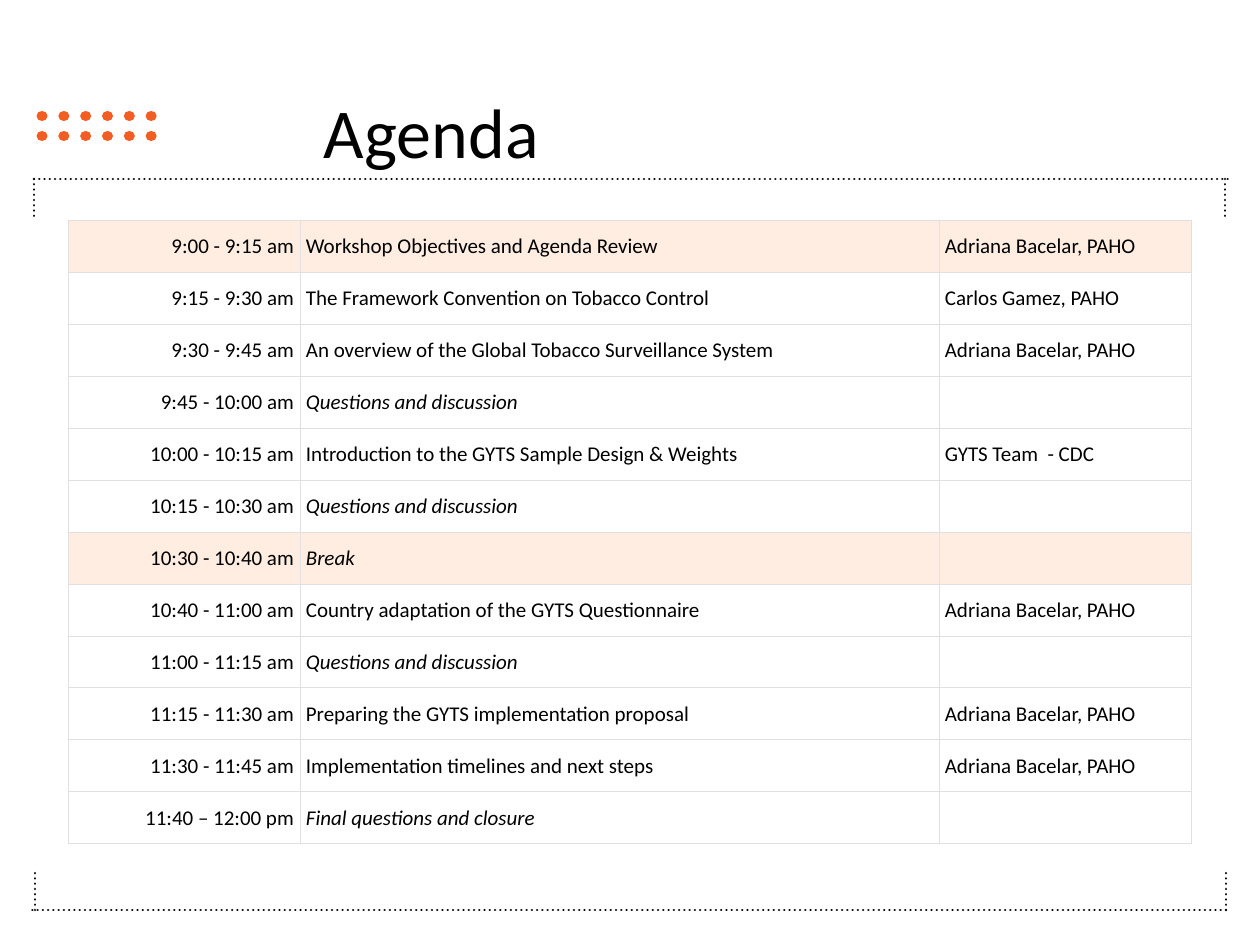
"""Build the workshop agenda slide."""
from dataclasses import dataclass

from lxml import etree
from pptx import Presentation
from pptx.dml.color import RGBColor
from pptx.enum.dml import MSO_LINE
from pptx.enum.shapes import MSO_CONNECTOR
from pptx.enum.text import MSO_ANCHOR, MSO_AUTO_SIZE, PP_ALIGN
from pptx.oxml.ns import qn
from pptx.util import Emu, Pt

STRAIGHT = MSO_CONNECTOR.STRAIGHT
ROUND_DOT = MSO_LINE.ROUND_DOT
MIDDLE, BOTTOM = MSO_ANCHOR.MIDDLE, MSO_ANCHOR.BOTTOM
LEFT, RIGHT = PP_ALIGN.LEFT, PP_ALIGN.RIGHT
NO_FIT = MSO_AUTO_SIZE.NONE

EMU_PER_PX = 914400 / 126
TITLE_ONLY = 5
FONT = "Calibri"
COLORS = {"text": "000000", "accent": "F15D22", "highlight": "FEEDE0", "border": "E0E0E0"}
COLUMN_WIDTHS = (232, 639, 252)
ROW_HEIGHT = 52
CELL_MARGIN = 6


@dataclass(frozen=True)
class DottedLine:
    x1: int
    y1: int
    x2: int
    y2: int
    color: str = "text"
    weight: float = 1.5


@dataclass(frozen=True)
class Session:
    time: str
    topic: str
    speaker: str = ""
    highlighted: bool = False


LINES = (
    DottedLine(34, 179, 1228, 179),
    DottedLine(1225, 179, 1225, 217),
    DottedLine(34, 179, 34, 217),
    DottedLine(1226, 910, 32, 910),
    DottedLine(35, 910, 35, 872),
    DottedLine(1226, 910, 1226, 872),
    DottedLine(42, 116, 157, 116, "accent", 6.25),
    DottedLine(42, 136, 157, 136, "accent", 6.25),
)

HOST = "Adriana Bacelar, PAHO"
QUESTIONS = "Questions and discussion"
SESSIONS = (
    Session("9:00 - 9:15 am", "Workshop Objectives and Agenda Review", HOST, True),
    Session("9:15 - 9:30 am", "The Framework Convention on Tobacco Control", "Carlos Gamez, PAHO"),
    Session("9:30 - 9:45 am", "An overview of the Global Tobacco Surveillance System", HOST),
    Session("9:45 - 10:00 am", QUESTIONS),
    Session("10:00 - 10:15 am", "Introduction to the GYTS Sample Design & Weights", "GYTS Team  - CDC"),
    Session("10:15 - 10:30 am", QUESTIONS),
    Session("10:30 - 10:40 am", "Break", highlighted=True),
    Session("10:40 - 11:00 am", "Country adaptation of the GYTS Questionnaire", HOST),
    Session("11:00 - 11:15 am", QUESTIONS),
    Session("11:15 - 11:30 am", "Preparing the GYTS implementation proposal", HOST),
    Session("11:30 - 11:45 am", "Implementation timelines and next steps", HOST),
    Session("11:40 – 12:00 pm", "Final questions and closure"),
)


def px(length: int) -> Emu:
    """Turn pixels into EMU."""
    return Emu(round(length * EMU_PER_PX))


def rgb(name: str) -> RGBColor:
    """Look up a named colour."""
    return RGBColor.from_string(COLORS[name])


def add_span(para, text: str, size: int, italic: bool = False) -> None:
    """Add one formatted run."""
    span = para.add_run()
    span.text = text
    span.font.name = FONT
    span.font.size = Pt(size)
    span.font.italic = italic
    span.font.color.rgb = rgb("text")


def draw_line(page, line: DottedLine) -> None:
    """Draw a line of round dots."""
    connector = page.shapes.add_connector(
        STRAIGHT, px(line.x1), px(line.y1), px(line.x2), px(line.y2)
    )
    connector.line.color.rgb = rgb(line.color)
    connector.line.width = Pt(line.weight)
    connector.line.dash_style = ROUND_DOT
    properties = connector._element.spPr
    properties.find(qn("a:ln")).set("cap", "rnd")
    etree.SubElement(properties, qn("a:effectLst"))


def draw_title(page, text: str) -> None:
    """Place and fill the title placeholder."""
    box = page.shapes.title
    box.left, box.top, box.width, box.height = px(324), px(15), px(885), px(158)
    frame = box.text_frame
    frame.auto_size = NO_FIT
    frame.vertical_anchor = BOTTOM
    frame.margin_left = frame.margin_right = frame.margin_top = frame.margin_bottom = 0
    para = frame.paragraphs[0]
    para.alignment = LEFT
    add_span(para, text, 40)


def set_borders(cell) -> None:
    """Put a thin border on all four sides of a cell."""
    properties = cell._tc.get_or_add_tcPr()
    for position, side in enumerate(("a:lnL", "a:lnR", "a:lnT", "a:lnB")):
        border = etree.Element(qn(side), w=str(Pt(0.5)))
        fill = etree.SubElement(border, qn("a:solidFill"))
        etree.SubElement(fill, qn("a:srgbClr"), val=COLORS["border"])
        properties.insert(position, border)


def fill_cell(cell, text: str, align: PP_ALIGN, italic: bool, highlighted: bool) -> None:
    """Format one agenda cell and write its text."""
    cell.margin_left = cell.margin_right = px(CELL_MARGIN)
    cell.margin_top = cell.margin_bottom = 0
    cell.vertical_anchor = MIDDLE
    if highlighted:
        cell.fill.solid()
        cell.fill.fore_color.rgb = rgb("highlight")
    else:
        cell.fill.background()
    set_borders(cell)
    if text:
        para = cell.text_frame.paragraphs[0]
        para.alignment = align
        add_span(para, text, 12, italic)


def draw_agenda(page, sessions: tuple[Session, ...]) -> None:
    """Draw the agenda table, with sessions without a speaker in italics."""
    table = page.shapes.add_table(
        len(sessions), len(COLUMN_WIDTHS), px(68), px(220),
        px(sum(COLUMN_WIDTHS)), px(ROW_HEIGHT * len(sessions)),
    ).table
    table.first_row = table.horz_banding = False
    for column, width in zip(table.columns, COLUMN_WIDTHS):
        column.width = px(width)
    for row, session in zip(table.rows, sessions):
        row.height = px(ROW_HEIGHT)
        time, topic, speaker = row.cells
        fill_cell(time, session.time, RIGHT, False, session.highlighted)
        fill_cell(topic, session.topic, LEFT, not session.speaker, session.highlighted)
        fill_cell(speaker, session.speaker, LEFT, False, session.highlighted)


def main() -> None:
    """Build and save the deck."""
    deck = Presentation()
    deck.slide_width, deck.slide_height = px(1260), px(945)
    page = deck.slides.add_slide(deck.slide_layouts[TITLE_ONLY])
    for line in LINES:
        draw_line(page, line)
    draw_title(page, "Agenda")
    draw_agenda(page, SESSIONS)
    deck.save("out.pptx")


if __name__ == "__main__":
    main()
